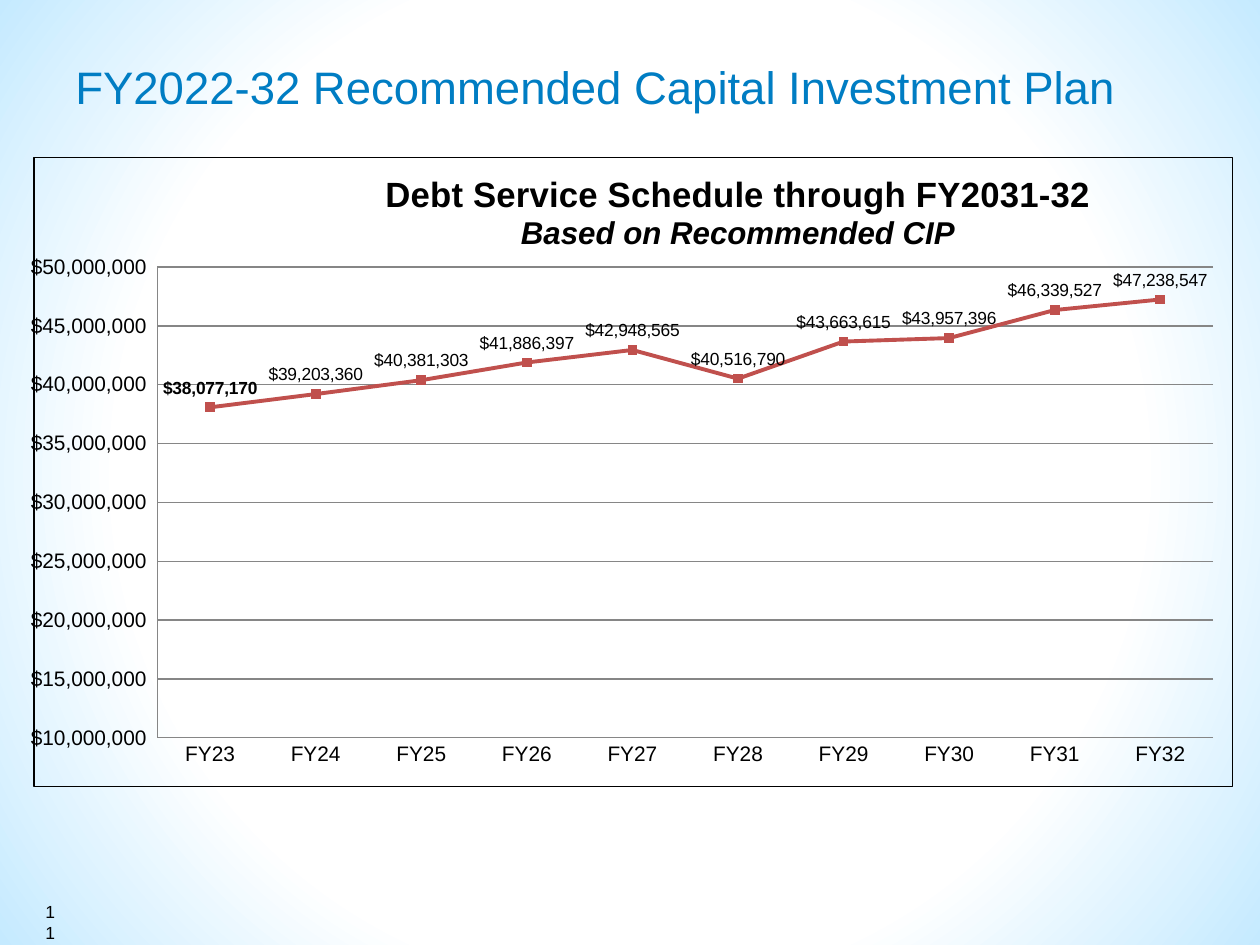
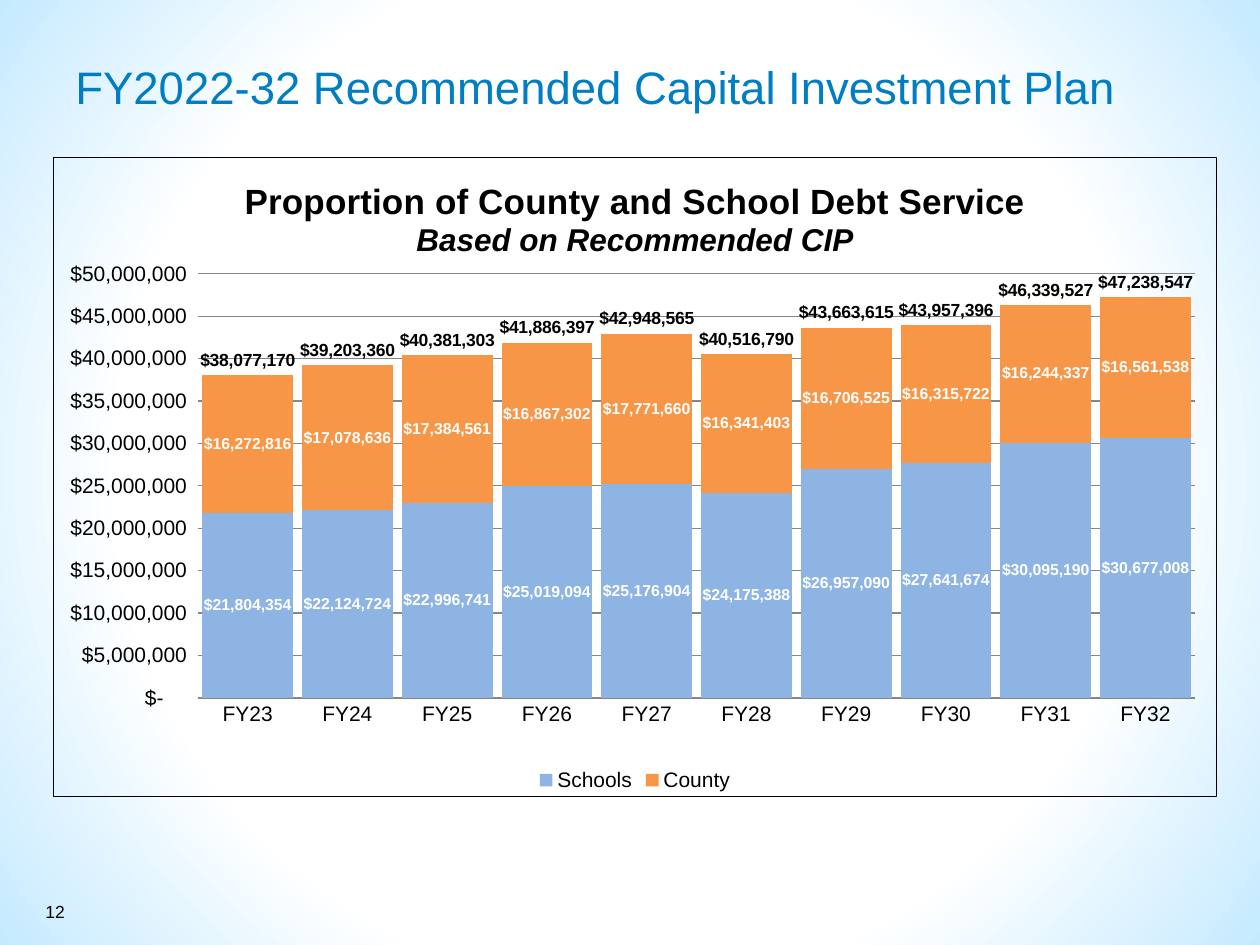
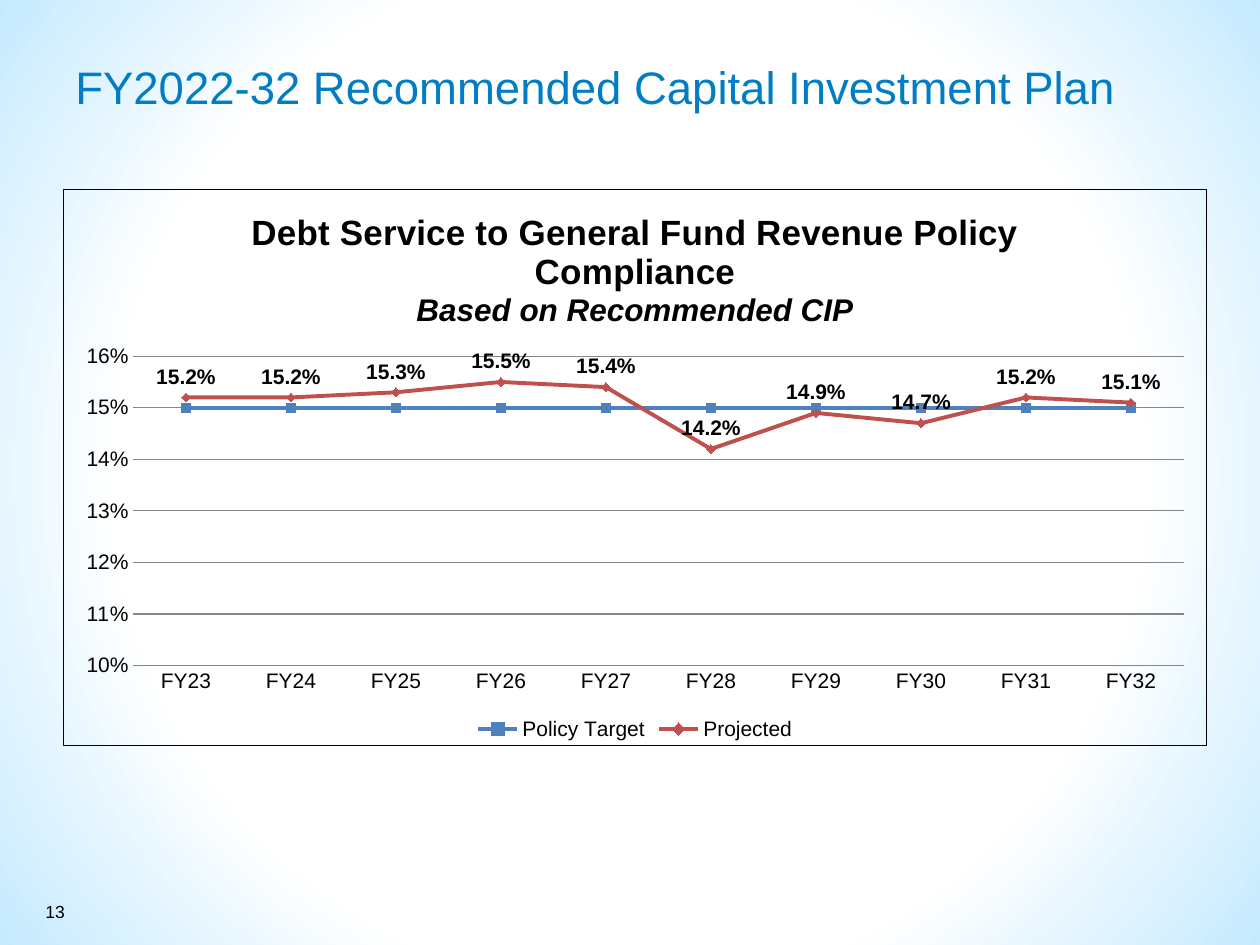
"""Build three slides of debt service charts for a capital investment plan."""
from lxml import etree
from pptx import Presentation
from pptx import util as u
from pptx.chart.data import CategoryChartData
from pptx.dml.color import RGBColor
from pptx.enum import chart as kinds
from pptx.oxml import parse_xml
from pptx.oxml.ns import nsdecls, qn

EMU_PER_PX = 914400 / 126
FONT = "Arial"
BLACK = RGBColor(0x00, 0x00, 0x00)
WHITE = RGBColor(0xFF, 0xFF, 0xFF)
SKY = RGBColor(0xC5, 0xEA, 0xFF)
TITLE_BLUE = RGBColor(0x00, 0x7D, 0xC3)
GRID_GREY = RGBColor(0x86, 0x86, 0x86)
RED = RGBColor(0xC0, 0x50, 0x4D)
BLUE = RGBColor(0x4F, 0x81, 0xBD)
LIGHT_BLUE = RGBColor(0x8E, 0xB4, 0xE3)
ORANGE = RGBColor(0xF7, 0x96, 0x46)

DOLLARS = r'_("$"* #,##0_);_("$"* \(#,##0\);_("$"* "-"??_);_(@_)'
YEARS = [f"FY{year}" for year in range(23, 33)]
SCHOOLS = [21804354, 22124724, 22996741, 25019094, 25176904,
           24175388, 26957090, 27641674, 30095190, 30677008]
COUNTY = [16272816, 17078636, 17384561, 16867302, 17771660,
          16341403, 16706525, 16315722, 16244337, 16561538]
TOTAL = [38077170, 39203360, 40381303, 41886397, 42948565,
         40516790, 43663615, 43957396, 46339527, 47238547]
PROJECTED = [0.152, 0.152, 0.153, 0.155, 0.154, 0.142, 0.149, 0.147, 0.152, 0.151]

Position = kinds.XL_LABEL_POSITION
Marker = kinds.XL_MARKER_STYLE


def px(length):
    """Turn pixels into EMU."""
    return u.Emu(round(length * EMU_PER_PX))


def set_font(font, size, color=BLACK, bold=False, italic=False):
    """Format a font."""
    font.name = FONT
    font.size = u.Pt(size)
    font.color.rgb = color
    font.bold = bold
    font.italic = italic


def write(para, text, **style):
    """Add formatted text to a paragraph."""
    span = para.add_run()
    span.text = text
    set_font(span.font, **style)


def add_text(page, text, left, top, width, height, **style):
    """Add a wrapping text box."""
    box = page.shapes.add_textbox(px(left), px(top), px(width), px(height))
    box.text_frame.word_wrap = True
    write(box.text_frame.paragraphs[0], text, **style)


def paint_background(master):
    """Give every slide a white centre that fades to sky blue."""
    fill = master.background.fill
    fill.gradient()
    for stop, color, position in zip(fill.gradient_stops, (WHITE, SKY), (0.65, 1)):
        stop.color.rgb = color
        stop.position = position
    linear = next(master.element.iter(qn("a:lin")))
    linear.getparent().replace(linear, parse_xml(
        f'<a:path {nsdecls("a")} path="circle">'
        '<a:fillToRect l="50000" t="50000" r="50000" b="50000"/></a:path>'))


def add_page(deck, number, number_width):
    """Add a slide with the shared title and its page number."""
    page = deck.slides.add_slide(deck.slide_layouts[6])
    add_text(page, "FY2022-32 Recommended Capital Investment Plan",
             63, 53, 1134, 95, size=26, color=TITLE_BLUE)
    add_text(page, str(number), 33, 895, number_width, 34, size=10)
    return page


def set_layout(parent, inner=False, **places):
    """Fix the place of a chart part in fractions of the chart."""
    layout = parent.find(qn("c:layout"))
    if layout is None:
        layout = etree.Element(qn("c:layout"))
        parent.insert(0, layout)
    manual = etree.SubElement(layout, qn("c:manualLayout"))
    if inner:
        etree.SubElement(manual, qn("c:layoutTarget"), val="inner")
    for side in ("x", "y"):
        etree.SubElement(manual, qn(f"c:{side}Mode"), val="edge")
    for side, value in places.items():
        etree.SubElement(manual, qn(f"c:{side}"), val=str(value))


def frame_chart(chart):
    """Draw a thin square black border around a clear chart."""
    space = chart.element
    if space.find(qn("c:roundedCorners")) is None:
        corners = etree.Element(qn("c:roundedCorners"), val="0")
        space.find(qn("c:date1904")).addnext(corners)
    space.find(qn("c:chart")).addnext(parse_xml(
        f'<c:spPr {nsdecls("c", "a")}><a:noFill/><a:ln w="9525"><a:solidFill>'
        f'<a:srgbClr val="{BLACK}"/></a:solidFill></a:ln></c:spPr>'))


def style_axes(chart, low, high, step, number_format, axis_line):
    """Format both axes and the gridlines."""
    category, value = chart.category_axis, chart.value_axis
    for axis in (category, value):
        axis.major_tick_mark = axis.minor_tick_mark = kinds.XL_TICK_MARK.NONE
        axis.format.line.color.rgb = GRID_GREY
        set_font(axis.tick_labels.font, 12)
    value.minimum_scale, value.maximum_scale, value.major_unit = low, high, step
    value.tick_labels.number_format = number_format
    value.tick_labels.number_format_is_linked = False
    value.has_major_gridlines = True
    value.major_gridlines.format.line.color.rgb = GRID_GREY
    value.major_gridlines.format.line.width = u.Pt(0.75)
    if not axis_line:
        value.format.line.fill.background()


def add_chart(page, kind, heading, place, series, scale, number_format,
              axis_line=False, legend=False):
    """Add a bordered chart with a two-line title."""
    data = CategoryChartData(number_format=number_format)
    data.categories = YEARS
    for name, values in series:
        data.add_series(name, values)
    chart = page.shapes.add_chart(kind, *map(px, place), data).chart
    set_font(chart.font, 12)
    frame_chart(chart)
    chart.plots[0].vary_by_categories = False
    style_axes(chart, *scale, number_format, axis_line)
    chart.has_title = True
    title = chart.chart_title.text_frame
    write(title.paragraphs[0], heading, size=20, bold=True)
    write(title.add_paragraph(), "Based on Recommended CIP", size=18, bold=True, italic=True)
    chart.has_legend = legend
    if legend:
        chart.legend.position = kinds.XL_LEGEND_POSITION.BOTTOM
        chart.legend.include_in_layout = False
        set_font(chart.legend.font, 12)
    return chart


def style_line(series, color, marker):
    """Colour a line and its markers."""
    series.smooth = False
    series.format.line.color.rgb = color
    series.format.line.width = u.Pt(2.25)
    series.marker.style = marker
    series.marker.size = 5
    series.marker.format.fill.solid()
    series.marker.format.fill.fore_color.rgb = color
    series.marker.format.line.color.rgb = color


def label_series(series, number_format, position=Position.ABOVE, **style):
    """Show the values of a series."""
    labels = series.data_labels
    labels.show_value = True
    labels.number_format = number_format
    labels.number_format_is_linked = False
    labels.position = position
    set_font(labels.font, **style)


def move_to_line_plot(chart, series):
    """Turn one column series into a line on the same axes."""
    columns = chart.plots[0]._element
    line = parse_xml(
        f'<c:lineChart {nsdecls("c")}><c:grouping val="standard"/>'
        '<c:varyColors val="0"/><c:marker val="1"/></c:lineChart>')
    node = series._element
    for flag in node.findall(qn("c:invertIfNegative")):
        node.remove(flag)
    line.insert(2, node)
    for axis in columns.findall(qn("c:axId")):
        etree.SubElement(line, qn("c:axId"), val=axis.get("val"))
    columns.addnext(line)
    return chart.plots[1].series[0]


def hide_legend_entry(chart, index):
    """Leave one series out of the legend."""
    legend = next(chart.element.iter(qn("c:legend")))
    legend.find(qn("c:legendPos")).addnext(parse_xml(
        f'<c:legendEntry {nsdecls("c")}><c:idx val="{index}"/>'
        '<c:delete val="1"/></c:legendEntry>'))


def plot_area(chart):
    """Return the plot area element."""
    return next(chart.element.iter(qn("c:plotArea")))


def build_schedule(page):
    """Chart total debt service by year."""
    chart = add_chart(page, kinds.XL_CHART_TYPE.LINE_MARKERS,
                      "Debt Service Schedule through FY2031-32", (25, 157, 1208, 630),
                      [("Series 1", TOTAL)], (10000000, 50000000, 5000000),
                      DOLLARS, axis_line=True)
    set_layout(chart.chart_title._element, x=0.29, y=0.02)
    set_layout(plot_area(chart), inner=True, x=0.103, y=0.174, w=0.881, h=0.749)
    total = chart.plots[0].series[0]
    style_line(total, RED, Marker.SQUARE)
    label_series(total, DOLLARS, size=10)
    first = total.points[0].data_label
    set_font(first.font, 10, bold=True)
    first.position = Position.ABOVE


def build_proportion(page):
    """Chart school and county shares with totals above."""
    chart = add_chart(page, kinds.XL_CHART_TYPE.COLUMN_STACKED,
                      "Proportion of County and School Debt Service", (53, 157, 1164, 640),
                      [("Schools", SCHOOLS), ("County", COUNTY), ("Series 3", TOTAL)],
                      (0, 50000000, 5000000), DOLLARS, legend=True)
    set_layout(plot_area(chart), inner=True, x=0.124, y=0.182, w=0.858, h=0.664)
    columns = chart.plots[0]
    columns.gap_width, columns.overlap = 10, 100
    total = move_to_line_plot(chart, columns.series[2])
    for share, color in zip(columns.series, (LIGHT_BLUE, ORANGE)):
        share.format.fill.solid()
        share.format.fill.fore_color.rgb = color
        label_series(share, DOLLARS, Position.CENTER, size=9, color=WHITE, bold=True)
    total.smooth = False
    total.format.line.fill.background()
    total.marker.style = Marker.NONE
    label_series(total, DOLLARS, size=10, bold=True)
    hide_legend_entry(chart, 2)


def build_compliance(page):
    """Chart the projected debt ratio against the policy target."""
    chart = add_chart(page, kinds.XL_CHART_TYPE.LINE_MARKERS,
                      "Debt Service to General Fund Revenue Policy Compliance",
                      (63, 189, 1144, 557),
                      [("Policy Target", [0.15] * len(YEARS)), ("Projected", PROJECTED)],
                      (0.1, 0.16, 0.01), "0%", legend=True)
    target, projected = chart.plots[0].series
    style_line(target, BLUE, Marker.SQUARE)
    style_line(projected, RED, Marker.DIAMOND)
    label_series(projected, "0.0%", size=12, bold=True)


def main():
    """Build and save the deck."""
    deck = Presentation()
    deck.slide_width, deck.slide_height = px(1260), px(945)
    paint_background(deck.slide_master)
    build_schedule(add_page(deck, 11, 40))
    build_proportion(add_page(deck, 12, 52))
    build_compliance(add_page(deck, 13, 83))
    deck.save("out.pptx")


if __name__ == "__main__":
    main()
